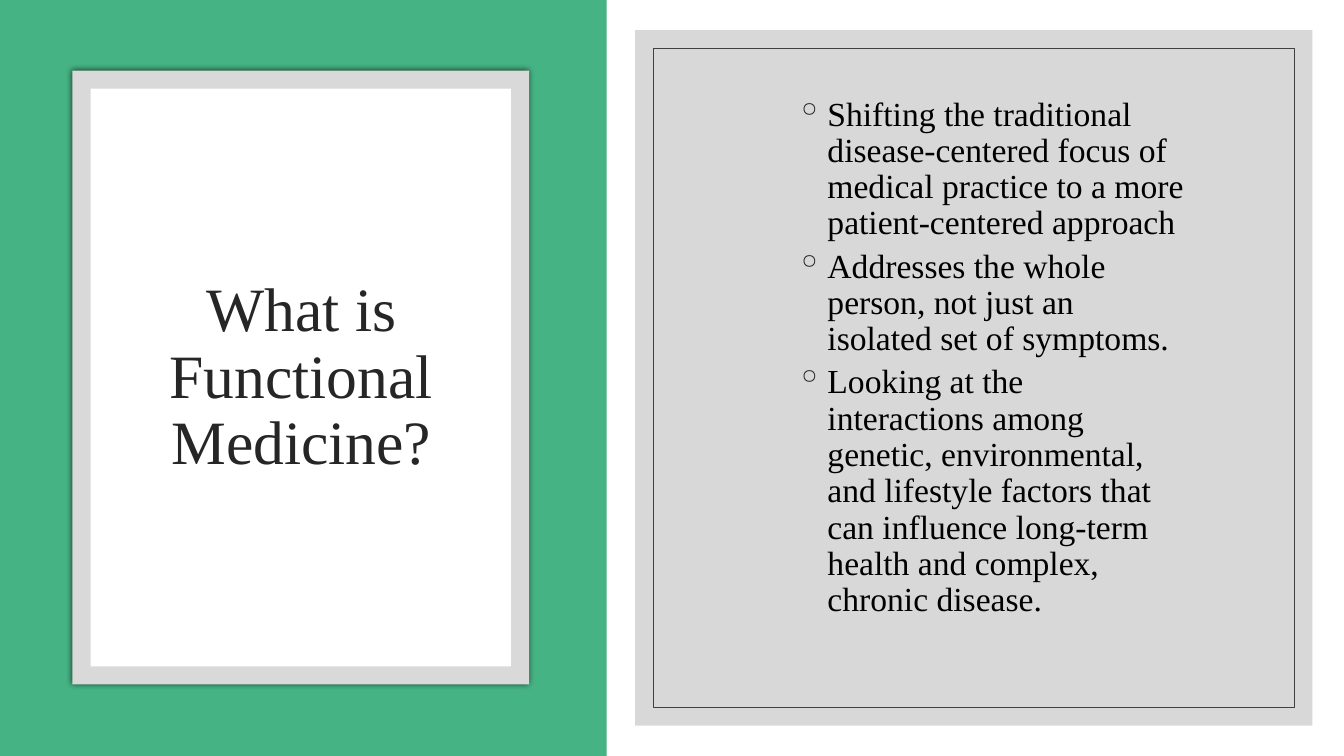
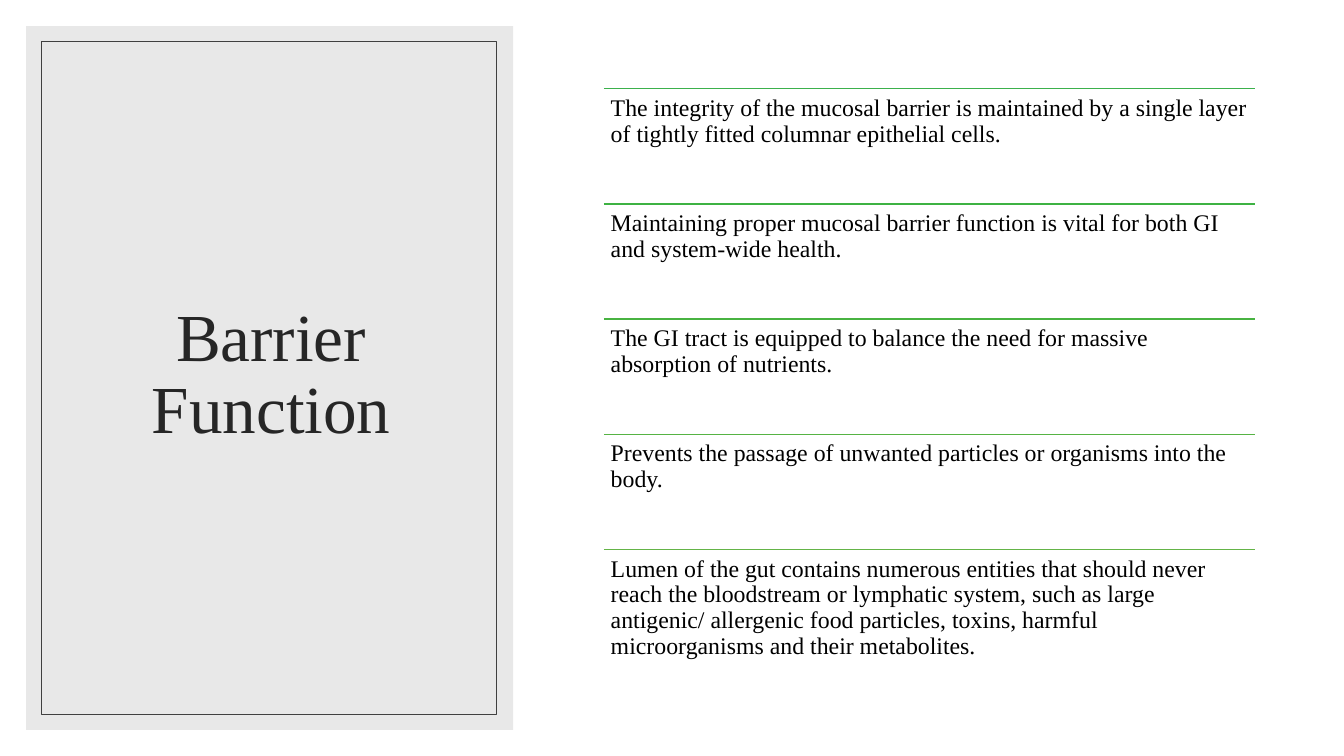
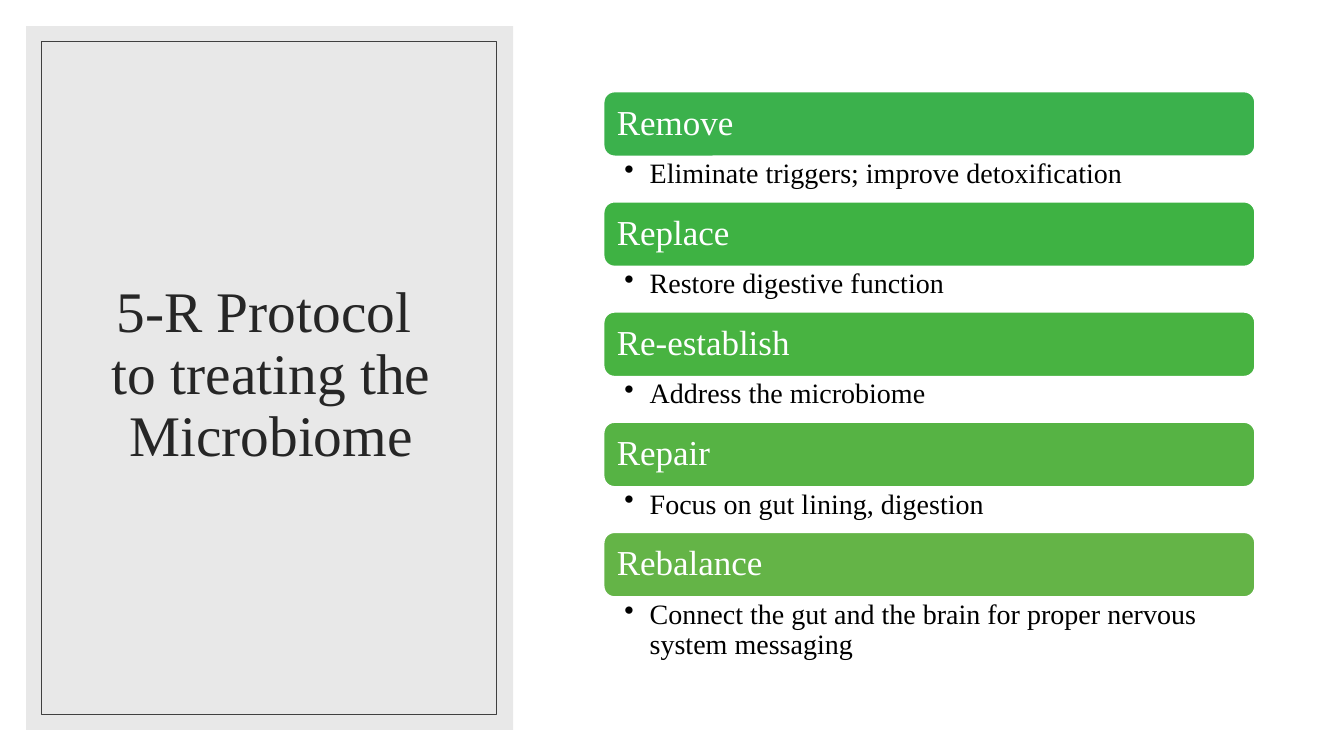
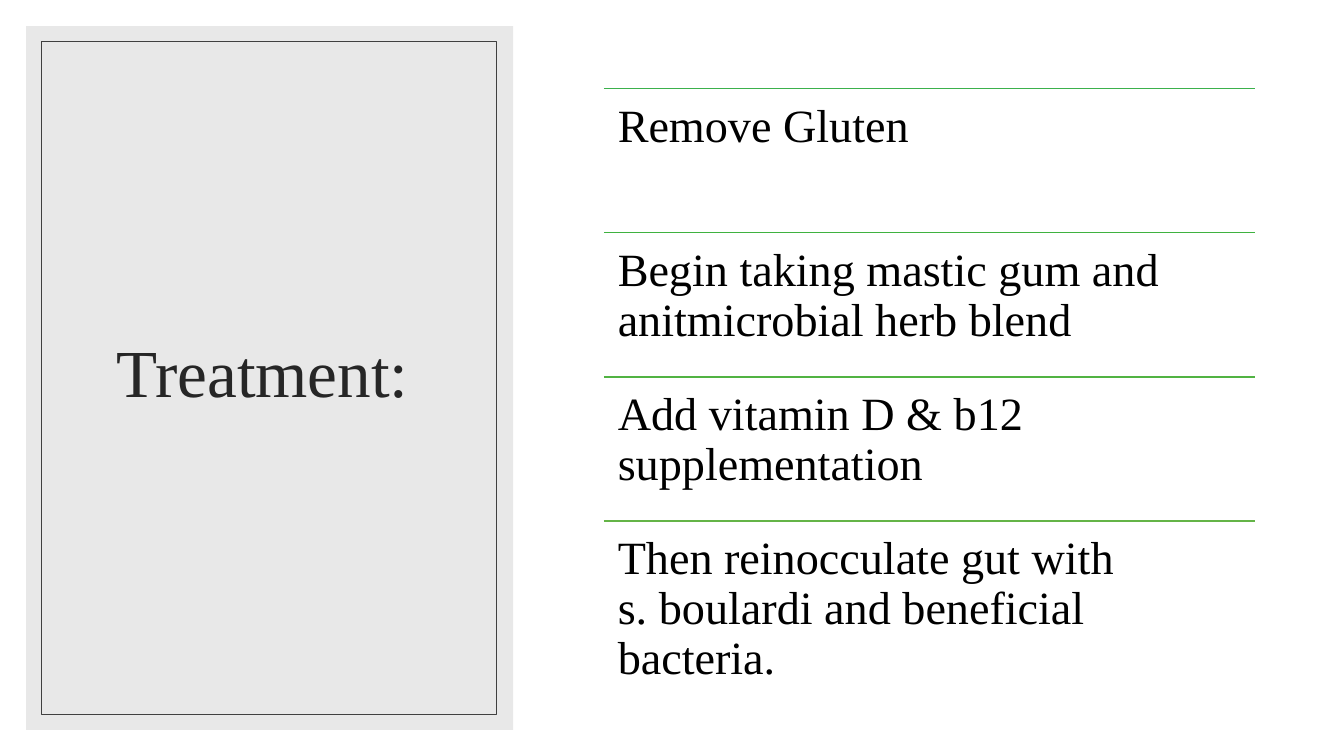
import dataclasses

import lxml.etree
import pptx
import pptx.dml.color
import pptx.enum.shapes
import pptx.enum.text
import pptx.oxml.ns
import pptx.util

Pt = pptx.util.Pt
SHAPE = pptx.enum.shapes.MSO_SHAPE
ALIGN = pptx.enum.text.PP_ALIGN
ANCHOR = pptx.enum.text.MSO_ANCHOR
qn = pptx.oxml.ns.qn


@dataclasses.dataclass(frozen=True)
class Theme:
    font: str = "Times New Roman"
    white: str = "FFFFFF"
    black: str = "000000"
    ink: str = "262626"
    frame: str = "404040"
    green: str = "46B384"
    light_gray: str = "D9D9D9"
    mid_gray: str = "BFBFBF"
    five_greens: tuple = ("3BB14C", "3EB243", "48B341", "56B344", "64B447")
    four_greens: tuple = ("3BB14C", "3FB240", "51B343", "64B447")
    title: int = 48
    card_title: int = 44
    long_title: int = 41
    treatment: int = 33
    step: int = 25
    body: int = 24
    detail: int = 20
    statement: int = 17


THEME = Theme()

DEFINITION_TITLE = "What is Functional Medicine?"
DEFINITION = [
    "Shifting the traditional disease-centered focus of medical practice to a more patient-centered approach",
    "Addresses the whole person, not just an\nisolated set of symptoms.",
    "Looking at the\ninteractions among\ngenetic, environmental,\nand lifestyle factors that can influence "
    "long-term health and complex, chronic disease.",
]

BARRIER_TITLE = "Barrier Function"
BARRIER = [
    "The integrity of the mucosal barrier is maintained by a single layer of tightly fitted columnar epithelial cells.",
    "Maintaining proper mucosal barrier function is vital for both GI and system-wide health.",
    "The GI tract is equipped to balance the need for massive absorption of nutrients.",
    "Prevents the passage of unwanted particles or organisms into the body.",
    "Lumen of the gut contains numerous entities that should never reach the bloodstream or lymphatic system, "
    "such as large antigenic/ allergenic food particles, toxins, harmful microorganisms and their metabolites.",
]

PROTOCOL_TITLE = "5-R Protocol \nto treating the\nMicrobiome"
PROTOCOL = [
    ("Remove", "Eliminate triggers; improve detoxification"),
    ("Replace", "Restore digestive function"),
    ("Re-establish", "Address the microbiome"),
    ("Repair", "Focus on gut lining, digestion"),
    ("Rebalance", "Connect the gut and the brain for proper nervous system messaging"),
]

TREATMENT_TITLE = "Treatment: "
TREATMENT = [
    "Remove Gluten",
    "Begin taking mastic gum and anitmicrobial herb blend",
    "Add vitamin D & b12 supplementation",
    "Then reinocculate gut with\ns. boulardi and beneficial bacteria.",
]

LIST_LEFT, LIST_WIDTH = 431.3, 465.1
RULES_TOP, RULES_HEIGHT = 63.4, 411.5
STEPS_TOP, STEP_PITCH, BAR_HEIGHT = 65.5, 78.7, 46.1


def rgb(color):
    return pptx.dml.color.RGBColor.from_string(color)


def add_child(parent, tag, **attributes):
    return lxml.etree.SubElement(parent, qn(tag), {name: str(value) for name, value in attributes.items()})


def add_box(slide, box, fill=None, opacity=None, line=None, line_width=0.5, kind=SHAPE.RECTANGLE):
    shape = slide.shapes.add_shape(kind, *map(Pt, box))
    shape.shadow.inherit = False
    if fill:
        shape.fill.solid()
        shape.fill.fore_color.rgb = rgb(fill)
        if opacity:
            color = shape.fill._xPr.find(qn("a:solidFill"))[0]
            add_child(color, "a:alpha", val=opacity * 1000)
    else:
        shape.fill.background()
    if line:
        shape.line.color.rgb = rgb(line)
        shape.line.width = Pt(line_width)
    else:
        shape.line.fill.background()
    return shape


def add_glow(shape):
    effects = shape._element.spPr.find(qn("a:effectLst"))
    shadow = add_child(effects, "a:outerShdw", blurRad=Pt(4), dist=0, dir=0, algn="ctr", rotWithShape=0)
    add_child(add_child(shadow, "a:srgbClr", val=THEME.black), "a:alpha", val=66000)


def add_rule(slide, top, color):
    ends = LIST_LEFT, top, LIST_LEFT + LIST_WIDTH, top
    rule = slide.shapes.add_connector(pptx.enum.shapes.MSO_CONNECTOR.STRAIGHT, *map(Pt, ends))
    rule.line.color.rgb = rgb(color)
    rule.line.width = Pt(1)
    add_child(rule._element.spPr, "a:effectLst")


def write(shape, paragraphs, size, color=THEME.black, align=ALIGN.LEFT, anchor=ANCHOR.TOP,
          insets=(7.2, 3.6, 7.2, 3.6), before=0, bullet=None, bullet_color=None, indent=(0, 0)):
    frame = shape.text_frame
    frame.word_wrap = True
    frame.vertical_anchor = anchor
    frame.margin_left, frame.margin_top, frame.margin_right, frame.margin_bottom = map(Pt, insets)
    for index, text in enumerate(paragraphs):
        paragraph = frame.add_paragraph() if index else frame.paragraphs[0]
        paragraph.text = text
        paragraph.alignment = align
        paragraph.line_spacing = 0.9
        paragraph.space_before = Pt(before)
        for run in paragraph.runs:
            run.font.name = THEME.font
            run.font.size = Pt(size)
            run.font.color.rgb = rgb(color)
        if bullet:
            properties = paragraph._p.get_or_add_pPr()
            properties.set("marL", str(Pt(indent[0])))
            properties.set("indent", str(Pt(indent[1])))
            add_child(add_child(properties, "a:buClr"), "a:srgbClr", val=bullet_color or color)
            add_child(properties, "a:buChar", char=bullet)


def add_text(slide, box, paragraphs, size, **text_format):
    write(slide.shapes.add_textbox(*map(Pt, box)), paragraphs, size, **text_format)


def add_title(slide, box, text, size):
    add_text(slide, box, [text], size, color=THEME.ink, align=ALIGN.CENTER, anchor=ANCHOR.MIDDLE)


def add_slide(presentation):
    return presentation.slides.add_slide(presentation.slide_layouts[6])


def add_panel_slide(presentation, title, size):
    slide = add_slide(presentation)
    add_box(slide, (18.7, 18.7, 347.8, 502.6), fill=THEME.light_gray, opacity=60)
    add_title(slide, (45.4, 43.9, 296.6, 449.3), title, size)
    add_box(slide, (29.5, 29.5, 324.7, 481), line=THEME.frame)
    return slide


def add_definition_slide(presentation):
    slide = add_slide(presentation)
    add_box(slide, (0, 0, 433.4, 540), fill=THEME.green)
    add_glow(add_box(slide, (51.8, 50.4, 326.2, 438.5), fill=THEME.light_gray))
    add_box(slide, (64.8, 63.4, 300.2, 412.6), fill=THEME.white)
    add_title(slide, (77.8, 93.6, 275, 353.5), DEFINITION_TITLE, THEME.card_title)
    add_box(slide, (453.6, 21.6, 483.8, 496.8), fill=THEME.mid_gray, opacity=60)
    add_box(slide, (466.6, 34.6, 457.9, 470.9), line=THEME.frame)
    add_text(slide, (504, 73.4, 349.9, 364.6), DEFINITION, THEME.body, anchor=ANCHOR.MIDDLE,
             before=5, bullet="◦", bullet_color=THEME.ink, indent=(80, -22.3))


def add_ruled_slide(presentation, title, statements, greens, size, inset):
    slide = add_panel_slide(presentation, title, THEME.title)
    pitch = RULES_HEIGHT / len(statements)
    for index, (statement, green) in enumerate(zip(statements, greens)):
        top = RULES_TOP + index * pitch
        add_rule(slide, top, green)
        add_text(slide, (LIST_LEFT, top, LIST_WIDTH, pitch), [statement], size, insets=(inset,) * 4)


def add_protocol_slide(presentation):
    slide = add_panel_slide(presentation, PROTOCOL_TITLE, THEME.long_title)
    for index, ((step, detail), green) in enumerate(zip(PROTOCOL, THEME.five_greens)):
        top = STEPS_TOP + index * STEP_PITCH
        bar = add_box(slide, (LIST_LEFT, top, LIST_WIDTH, BAR_HEIGHT), fill=green, line=THEME.white,
                      line_width=1, kind=SHAPE.ROUNDED_RECTANGLE)
        write(bar, [step], THEME.step, color=THEME.white, anchor=ANCHOR.MIDDLE, insets=(7.2,) * 4)
        add_text(slide, (LIST_LEFT, top + BAR_HEIGHT, LIST_WIDTH, STEP_PITCH - BAR_HEIGHT), [detail],
                 THEME.detail, insets=(14.8, 2.2, 13.7, 2.2), bullet="•", indent=(18, -18))


def main():
    presentation = pptx.Presentation()
    presentation.slide_width, presentation.slide_height = Pt(960), Pt(540)
    add_definition_slide(presentation)
    add_ruled_slide(presentation, BARRIER_TITLE, BARRIER, THEME.five_greens, THEME.statement, 5)
    add_protocol_slide(presentation)
    add_ruled_slide(presentation, TREATMENT_TITLE, TREATMENT, THEME.four_greens, THEME.treatment, 10)
    presentation.save("out.pptx")


if __name__ == "__main__":
    main()
